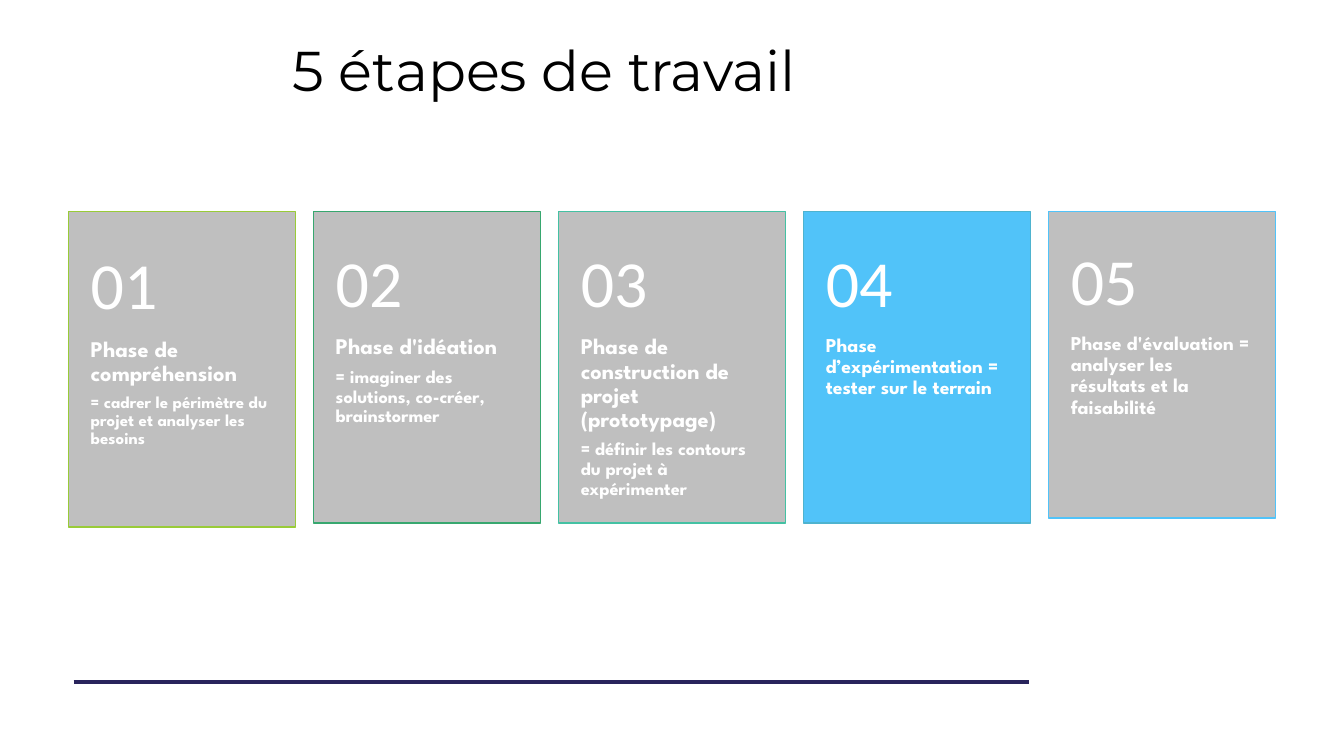
from dataclasses import dataclass
from lxml.etree import SubElement
from pptx import Presentation
from pptx.dml.color import RGBColor as Rgb
from pptx.enum.shapes import MSO_CONNECTOR as Link, MSO_SHAPE as Form
from pptx.enum.text import MSO_ANCHOR as Anchor, MSO_AUTO_SIZE as Fit, PP_ALIGN as Align
from pptx.oxml.ns import qn
from pptx.slide import Slide
from pptx.text.text import TextFrame, _Paragraph as Para
from pptx.util import Emu, Pt

SCALE = 9144


@dataclass(frozen=True)
class Theme:
    ink: str = "000000"
    white: str = "FFFFFF"
    gray: str = "BFBFBF"
    sky: str = "51C3F9"
    navy: str = "29245C"
    head: str = "Montserrat"
    body: str = "League Spartan"
    digit: str = "Calibri"
    title: int = 40
    number: int = 47


@dataclass(frozen=True)
class Line:
    text: str
    size: int


@dataclass(frozen=True)
class Step:
    height: int
    fill: str
    edge: str
    lines: tuple[Line, ...]


THEME = Theme()
LEFT, TOP, WIDTH, PITCH = 68, 210, 225, 243
STEPS = (
    Step(313, THEME.gray, "99CB38", (
        Line("Phase de compréhension", 16),
        Line("= cadrer le périmètre du projet et analyser les besoins", 12))),
    Step(309, THEME.gray, "37A76F", (
        Line("Phase d'idéation", 16),
        Line("= imaginer des solutions, co-créer, brainstormer", 13))),
    Step(309, THEME.gray, "44C1A3", (
        Line("Phase de construction de projet (prototypage)", 16),
        Line("= définir les contours du projet à expérimenter", 13))),
    Step(309, THEME.sky, "4EB3CF", (
        Line("Phase d’expérimentation = tester sur le terrain", 14),)),
    Step(304, THEME.gray, THEME.sky, (
        Line("Phase d'évaluation = analyser les résultats et la faisabilité", 14),)),
)


def px(count: int) -> Emu:
    return Emu(count * SCALE)


def style(para: Para, size: int, face: str, color: str, bold: bool = False) -> None:
    para.alignment = Align.LEFT
    para.line_spacing = 0.9
    for run in para.runs:
        run.font.size = Pt(size)
        run.font.name = face
        run.font.bold = bold
        run.font.color.rgb = Rgb.from_string(color)


def add_box(slide: Slide, left: int, top: int, height: int,
            above: int, below: int) -> TextFrame:
    box = slide.shapes.add_textbox(px(left), px(top), px(WIDTH), px(height))
    frame = box.text_frame
    frame.word_wrap = True
    frame.auto_size = Fit.NONE
    frame.margin_left = frame.margin_right = px(22)
    frame.margin_top, frame.margin_bottom = px(above), px(below)
    return frame


def add_step(slide: Slide, index: int, step: Step) -> None:
    left = LEFT + PITCH * index
    card = slide.shapes.add_shape(
        Form.RECTANGLE, px(left), px(TOP), px(WIDTH), px(step.height))
    card.shadow.inherit = False
    card.fill.solid()
    card.fill.fore_color.rgb = Rgb.from_string(step.fill)
    card.line.color.rgb = Rgb.from_string(step.edge)
    card.line.width = Pt(1)

    split = TOP + step.height * 2 // 5
    frame = add_box(slide, left, split, TOP + step.height - split, 0, 36)
    frame.text = "\n".join(line.text for line in step.lines)
    for para, line in zip(frame.paragraphs, step.lines):
        style(para, line.size, THEME.body, THEME.white, True)
        para.space_after = Pt(line.size * 0.35)

    frame = add_box(slide, left, split - 103, 108, 18, 18)
    frame.vertical_anchor = Anchor.MIDDLE
    frame.text = f"{index + 1:02}"
    style(frame.paragraphs[0], THEME.number, THEME.digit, THEME.white)


def add_title(slide: Slide) -> None:
    title = slide.shapes.title
    title.left, title.top = px(280), px(0)
    title.width, title.height = px(1150), px(145)
    frame = title.text_frame
    frame.text = "5 étapes de travail"
    frame.auto_size = Fit.NONE
    frame.vertical_anchor = Anchor.MIDDLE
    style(frame.paragraphs[0], THEME.title, THEME.head, THEME.ink)


def add_rule(slide: Slide) -> None:
    rule = slide.shapes.add_connector(
        Link.STRAIGHT, px(73), px(677), px(1021), px(677))
    rule.line.color.rgb = Rgb.from_string(THEME.navy)
    rule.line.width = Pt(3)
    SubElement(rule._element.spPr, qn("a:effectLst"))


def main() -> None:
    deck = Presentation()
    deck.slide_width, deck.slide_height = px(1333), px(750)
    slide = deck.slides.add_slide(deck.slide_layouts.get_by_name("Title Only"))
    add_rule(slide)
    add_title(slide)
    for index, step in enumerate(STEPS):
        add_step(slide, index, step)
    deck.save("out.pptx")


if __name__ == "__main__":
    main()
